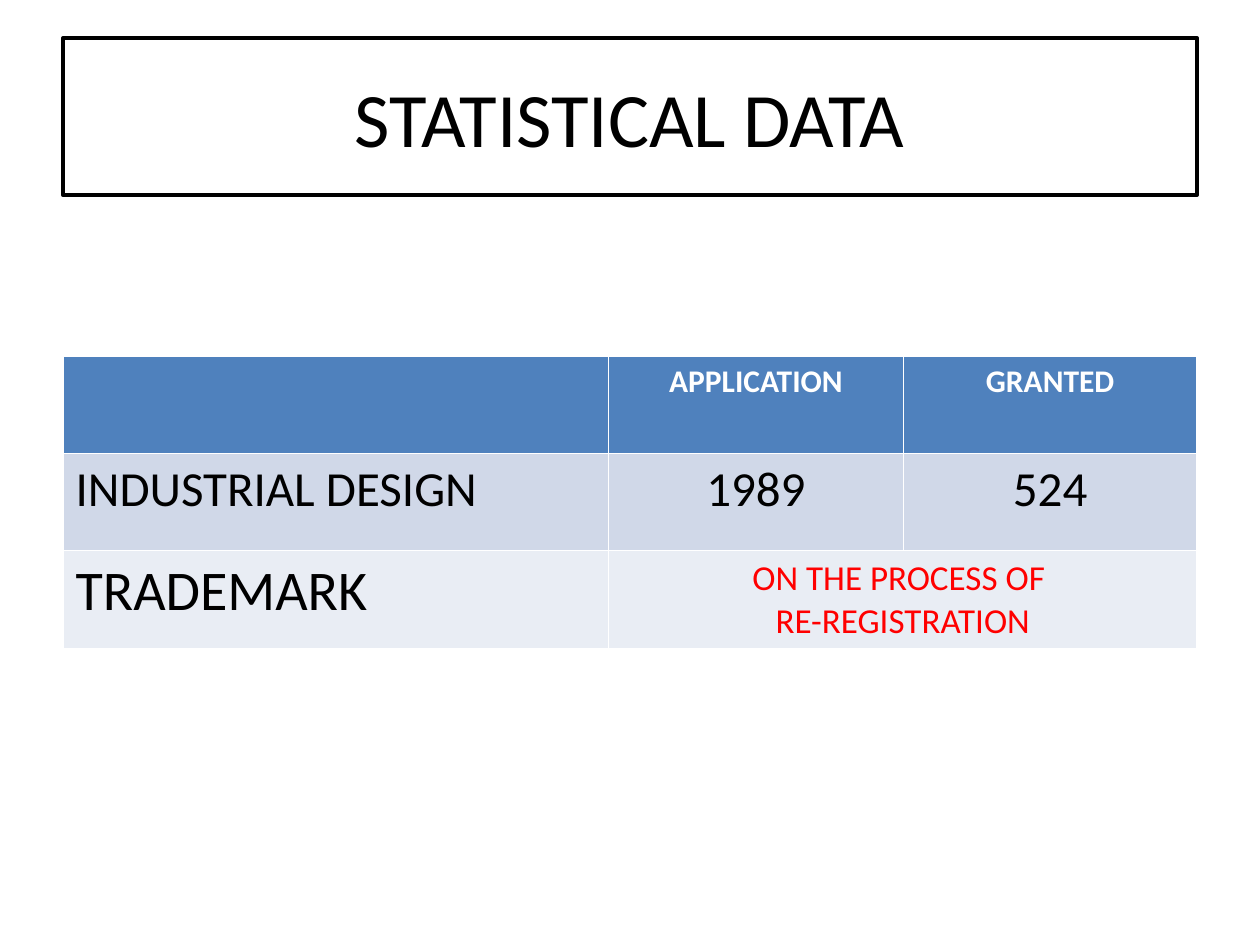
from pptx import Presentation
from pptx.dml.color import RGBColor
from pptx.enum.shapes import MSO_SHAPE
from pptx.enum.text import MSO_ANCHOR, PP_ALIGN
from pptx.util import Inches, Pt

LEFT, CENTER = PP_ALIGN.LEFT, PP_ALIGN.CENTER
MIDDLE = MSO_ANCHOR.MIDDLE
RECTANGLE = MSO_SHAPE.RECTANGLE

BLACK = RGBColor(0x00, 0x00, 0x00)
WHITE = RGBColor(0xFF, 0xFF, 0xFF)
RED = RGBColor(0xFF, 0x00, 0x00)
BLUE = RGBColor(0x4F, 0x81, 0xBD)
BAND_DARK = RGBColor(0xD0, 0xD8, 0xE8)
BAND_LIGHT = RGBColor(0xE9, 0xED, 0xF4)

TITLE = "STATISTICAL DATA"
ROWS = [
    ["", "APPLICATION", "GRANTED"],
    ["INDUSTRIAL DESIGN", "1989", "524"],
    ["TRADEMARK", "ON THE PROCESS OF \nRE-REGISTRATION", ""],
]
ROW_FILLS = [BLUE, BAND_DARK, BAND_LIGHT]
COL_WIDTHS = [4.33, 2.34, 2.33]
ROW_HEIGHT = 0.77

TITLE_FONT = {"size": Pt(44), "bold": False}
HEADER = {"size": Pt(18), "bold": True}
BODY = {"size": Pt(28), "bold": False}
LABEL = {"size": Pt(32), "bold": False}
NOTE = {"size": Pt(20), "bold": False}
# (font, colour) of each cell
CELL_STYLES = [
    [(HEADER, WHITE)] * 3,
    [(BODY, BLACK)] * 3,
    [(LABEL, BLACK), (NOTE, RED), (NOTE, RED)],
]


def write(tf, text, font, color, align):
    tf.text = text
    for p in tf.paragraphs:
        p.alignment = align
        for r in p.runs:
            r.font.name = "Calibri"
            r.font.color.rgb = color
            for name, value in font.items():
                setattr(r.font, name, value)


def add_title(s):
    sp = s.shapes.add_shape(RECTANGLE, Inches(0.5), Inches(0.3), Inches(9), Inches(1.25))
    sp.shadow.inherit = False
    sp.fill.solid()
    sp.fill.fore_color.rgb = WHITE
    sp.line.color.rgb = BLACK
    sp.line.width = Pt(2)
    tf = sp.text_frame
    tf.word_wrap = True
    tf.vertical_anchor = MIDDLE
    write(tf, TITLE, TITLE_FONT, BLACK, CENTER)


def add_data_table(s):
    table = s.shapes.add_table(
        len(ROWS), len(COL_WIDTHS), Inches(0.5), Inches(2.83),
        Inches(sum(COL_WIDTHS)), Inches(ROW_HEIGHT * len(ROWS)),
    ).table
    for column, width in zip(table.columns, COL_WIDTHS):
        column.width = Inches(width)
    for i, (texts, fill, styles) in enumerate(zip(ROWS, ROW_FILLS, CELL_STYLES)):
        table.rows[i].height = Inches(ROW_HEIGHT)
        for j, (text, (font, color)) in enumerate(zip(texts, styles)):
            cell = table.cell(i, j)
            cell.fill.solid()
            cell.fill.fore_color.rgb = fill
            if text:
                write(cell.text_frame, text, font, color, CENTER if j else LEFT)
    table.cell(2, 1).merge(table.cell(2, 2))


def main():
    prs = Presentation()
    prs.slide_width, prs.slide_height = Inches(10), Inches(7.5)
    s = prs.slides.add_slide(prs.slide_layouts[6])
    add_title(s)
    add_data_table(s)
    prs.save("out.pptx")


if __name__ == "__main__":
    main()
